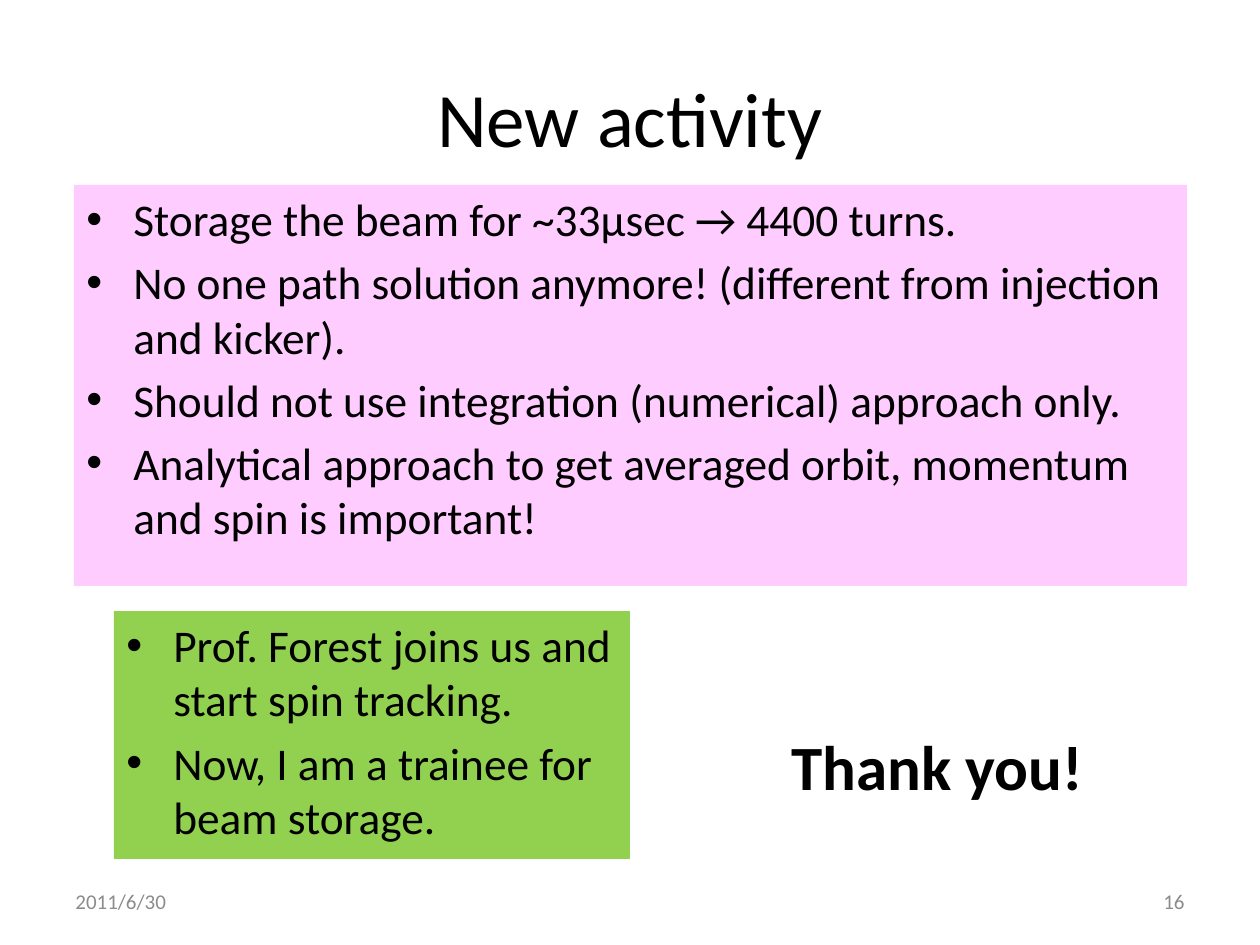
from lxml.etree import SubElement
from pptx import Presentation
from pptx.dml.color import RGBColor
from pptx.enum.shapes import MSO_SHAPE
from pptx.enum.text import MSO_ANCHOR, PP_ALIGN
from pptx.oxml.ns import qn
from pptx.util import Emu, Pt

PX = 914400 // 126
INDENT = 47


def rgb(code):
    return RGBColor.from_string(code)


def write(sp, lines, size, color="000000", bold=False, align=PP_ALIGN.LEFT,
          anchor=MSO_ANCHOR.TOP):
    tf = sp.text_frame
    tf.word_wrap = True
    tf.vertical_anchor = anchor
    tf.text = "\n".join(lines)
    for p in tf.paragraphs:
        p.alignment = align
        for r in p.runs:
            r.font.name = "Calibri"
            r.font.size = Pt(size)
            r.font.bold = bold
            r.font.color.rgb = rgb(color)


prs = Presentation()
prs.slide_width = Emu(1260 * PX)
prs.slide_height = Emu(945 * PX)
s = prs.slides.add_slide(prs.slide_layouts[6])

# Bulleted panels
panels = [
    ((74, 185, 1113, 401), "FFCCFF", [
        "Storage the beam for ~33μsec → 4400 turns.",
        "No one path solution anymore! (different from injection and kicker).",
        "Should not use integration (numerical) approach only.",
        "Analytical approach to get averaged orbit, momentum and spin is important!",
    ]),
    ((114, 611, 516, 248), "92D050", [
        "Prof. Forest joins us and start spin tracking.",
        "Now, I am a trainee for beam storage.",
    ]),
]
for box, fill, lines in panels:
    sp = s.shapes.add_shape(MSO_SHAPE.RECTANGLE, *[Emu(v * PX) for v in box])
    sp.shadow.inherit = False
    sp.fill.solid()
    sp.fill.fore_color.rgb = rgb(fill)
    sp.line.fill.background()
    write(sp, lines, 25.9)
    for p in sp.text_frame.paragraphs:
        p.space_before = Pt(5)
        pPr = p._p.get_or_add_pPr()
        pPr.set("marL", str(INDENT * PX))
        pPr.set("indent", str(-INDENT * PX))
        SubElement(pPr, qn("a:buFont"), typeface="Arial")
        SubElement(pPr, qn("a:buChar"), char="•")

# Title, closing words and footer
GREY = "8C8C8C"
labels = [
    ((63, 38, 1134, 158), "New activity", 44, "000000", False, PP_ALIGN.CENTER, MSO_ANCHOR.MIDDLE),
    ((779, 721, 387, 89), "Thank you!", 36, "000000", True, PP_ALIGN.LEFT, MSO_ANCHOR.TOP),
    ((63, 876, 294, 50), "2011/6/30", 12, GREY, False, PP_ALIGN.LEFT, MSO_ANCHOR.MIDDLE),
    ((903, 876, 294, 50), "16", 12, GREY, False, PP_ALIGN.RIGHT, MSO_ANCHOR.MIDDLE),
]
for box, text, *style in labels:
    sp = s.shapes.add_textbox(*[Emu(v * PX) for v in box])
    write(sp, [text], *style)

prs.save("out.pptx")
